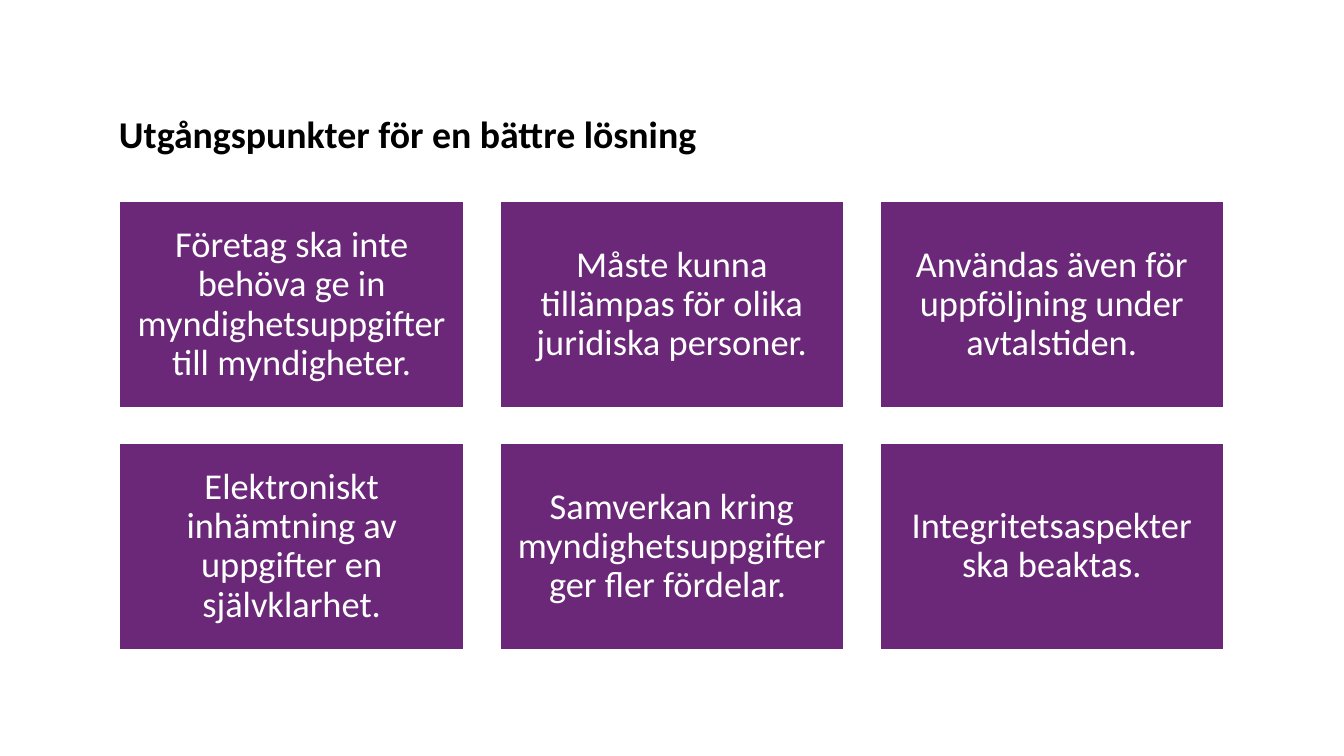
from pptx import Presentation
from pptx import util as u
from pptx.dml.color import RGBColor
from pptx.enum import shapes, text


def tint(code):
    return RGBColor.from_string(code)


class Deck:
    font = "Calibri"
    ink = "000000"
    paper = "FFFFFF"
    plum = "6B2879"

    def __init__(self, wide, high):
        self.prs = Presentation()
        self.prs.slide_width = u.Pt(wide)
        self.prs.slide_height = u.Pt(high)
        self.slide = self.prs.slides.add_slide(self.prs.slide_layouts[6])

    def label(self, shape, words, size, color, inset, align, anchor, bold=False):
        frame = shape.text_frame
        frame.word_wrap = True
        frame.vertical_anchor = anchor
        frame.margin_left = frame.margin_right = u.Pt(inset)
        frame.margin_top = frame.margin_bottom = u.Pt(inset)
        para = frame.paragraphs[0]
        para.alignment = align
        para.line_spacing = 0.9
        run = para.add_run()
        run.text = words
        run.font.name = self.font
        run.font.size = u.Pt(size)
        run.font.bold = bold
        run.font.color.rgb = tint(color)

    def title(self, words, x, y, w, h):
        box = self.slide.shapes.add_textbox(u.Pt(x), u.Pt(y), u.Pt(w), u.Pt(h))
        self.label(box, words, 27, self.ink, 0, text.PP_ALIGN.LEFT,
                   text.MSO_ANCHOR.TOP, bold=True)

    def card(self, words, x, y, w, h):
        box = self.slide.shapes.add_shape(
            shapes.MSO_SHAPE.RECTANGLE, u.Pt(x), u.Pt(y), u.Pt(w), u.Pt(h))
        box.shadow.inherit = False
        box.fill.solid()
        box.fill.fore_color.rgb = tint(self.plum)
        box.line.color.rgb = tint(self.paper)
        box.line.width = u.Pt(2)
        self.label(box, words, 26, self.paper, 7.8, text.PP_ALIGN.CENTER,
                   text.MSO_ANCHOR.MIDDLE)


def main():
    deck = Deck(960, 540)
    left = 85

    # Heading
    deck.title("Utgångspunkter för en bättre lösning", left, 82.8, 708.5, 31.7)

    # Cards in a grid of three columns
    points = [
        "Företag ska inte behöva ge in myndighetsuppgifter till myndigheter.",
        "Måste kunna tillämpas för olika juridiska personer.",
        "Användas även för uppföljning under avtalstiden.",
        "Elektroniskt inhämtning av uppgifter en självklarhet.",
        "Samverkan kring myndighetsuppgifter ger fler fördelar. ",
        "Integritetsaspekter ska beaktas.",
    ]
    top, wide, high, gap = 143.5, 246.8, 148.1, 24.7
    for i, words in enumerate(points):
        row, col = divmod(i, 3)
        deck.card(words, left + col * (wide + gap), top + row * (high + gap),
                  wide, high)

    deck.prs.save("out.pptx")


if __name__ == "__main__":
    main()
